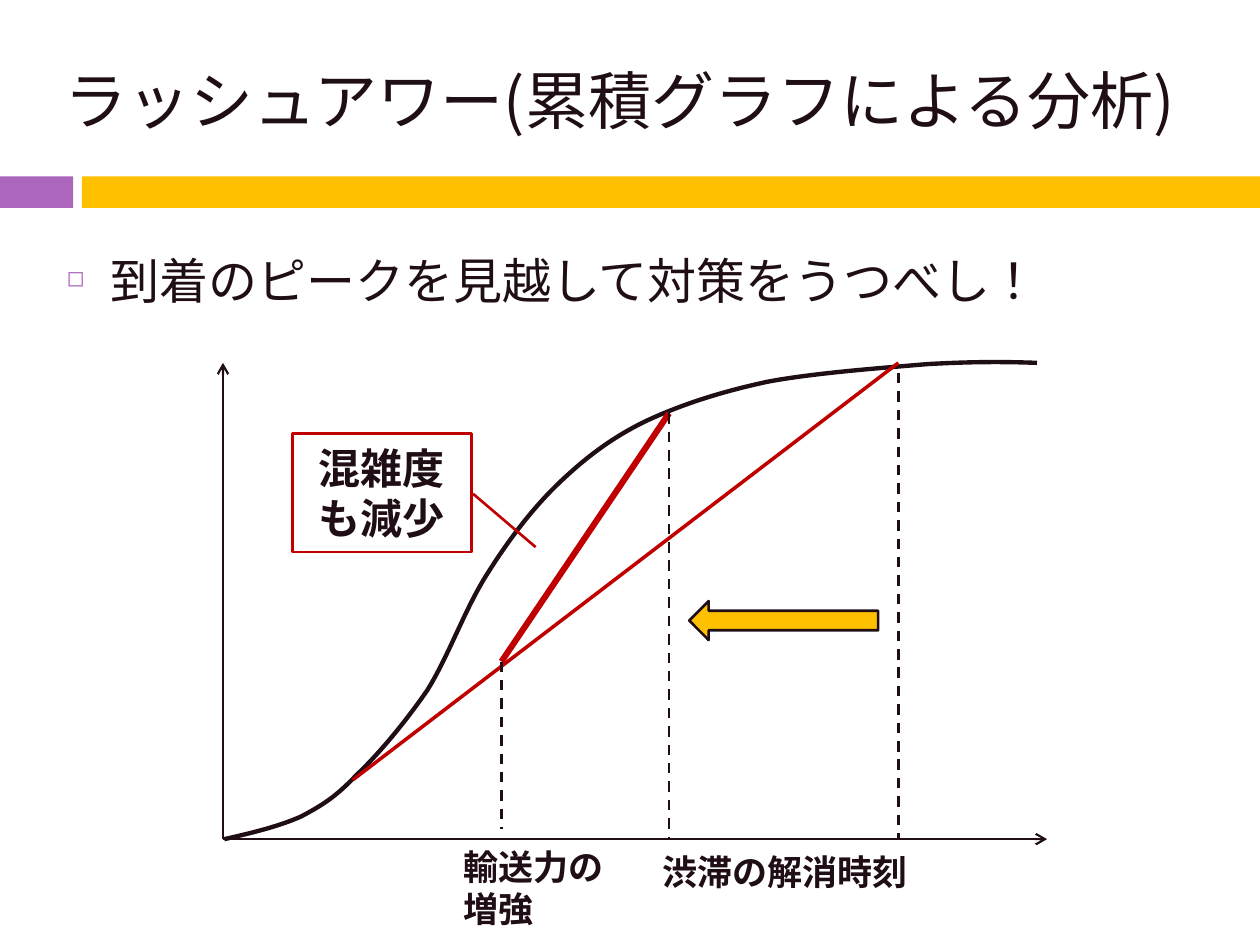
import dataclasses
from typing import Optional

import pptx
import pptx.dml.color
import pptx.enum.dml
import pptx.enum.lang
import pptx.enum.shapes
import pptx.enum.text
import pptx.oxml
import pptx.oxml.ns
import pptx.util

Inches = pptx.util.Inches
Pt = pptx.util.Pt
SHAPE = pptx.enum.shapes.MSO_SHAPE
ANCHOR = pptx.enum.text.MSO_ANCHOR
ALIGN = pptx.enum.text.PP_ALIGN

FONT = "Noto Sans CJK JP"
INK, RED, GOLD, PURPLE = "200E17", "C00000", "FFC000", "AC66BB"

# Positions shared by the parts of the graph
ORIGIN_X, AXIS_Y, TOP_Y = 1.77, 6.66, 2.88
BOOST_X, BOOST_Y = 3.98, 5.25
EARLY_X, EARLY_Y = 5.31, 3.28
LATE_X = 7.13


@dataclasses.dataclass
class Box:
    left: float
    top: float
    width: float
    height: float

    def lengths(self) -> list:
        return [Inches(value) for value in dataclasses.astuple(self)]


@dataclasses.dataclass
class Line:
    start: tuple
    end: tuple
    color: str
    width: float
    dashed: bool = False
    arrow: bool = False


@dataclasses.dataclass
class Label:
    text: str
    box: Box
    size: float
    bold: bool = False
    anchor: ANCHOR = ANCHOR.TOP


AXES = [
    Line((ORIGIN_X, AXIS_Y), (ORIGIN_X, TOP_Y), INK, 1.25, arrow=True),
    Line((ORIGIN_X, AXIS_Y), (8.31, AXIS_Y), INK, 1.25, arrow=True),
]
DEPARTURES = [
    Line((2.8, 6.19), (LATE_X, TOP_Y), RED, 2),
    Line((BOOST_X, BOOST_Y), (EARLY_X, EARLY_Y), RED, 3.5),
]
GUIDES = [
    Line((LATE_X, 2.96), (LATE_X, AXIS_Y), INK, 1.5, dashed=True),
    Line((BOOST_X, BOOST_Y), (BOOST_X, 6.58), INK, 1.5, dashed=True),
    Line((EARLY_X, EARLY_Y), (EARLY_X, AXIS_Y), INK, 1.5, dashed=True),
]
TITLE = Label("ラッシュアワー(累積グラフによる分析)", Box(0.41, 0.25, 9.31, 1.08), 36, anchor=ANCHOR.MIDDLE)
MESSAGE = Label("到着のピークを見越して対策をうつべし！", Box(0.43, 1.94, 9.21, 5.2), 28)
AXIS_LABELS = [
    Label("渋滞の解消時刻", Box(5.16, 6.7, 2.28, 0.44), 20, True),
    Label("輸送力の増強", Box(3.58, 6.66, 1.34, 0.77), 20, True),
]

# Arrivals: start point, then two control points and an end per segment
ARRIVALS_START = (1.78, 6.66)
ARRIVALS = [
    ((2, 6.61), (2.21, 6.56), (2.39, 6.48)),
    ((2.56, 6.39), (2.67, 6.32), (2.83, 6.15)),
    ((3, 5.99), (3.21, 5.74), (3.39, 5.48)),
    ((3.56, 5.21), (3.69, 4.83), (3.87, 4.55)),
    ((4.04, 4.28), (4.23, 4.03), (4.44, 3.83)),
    ((4.65, 3.63), (4.86, 3.47), (5.13, 3.34)),
    ((5.41, 3.21), (5.72, 3.11), (6.09, 3.03)),
    ((6.46, 2.96), (7, 2.92), (7.36, 2.89)),
    ((7.71, 2.87), (7.97, 2.87), (8.23, 2.88)),
]


def rgb(color: str) -> pptx.dml.color.RGBColor:
    return pptx.dml.color.RGBColor.from_string(color)


def add_xml(parent, tag: str, **attributes: str):
    element = parent.makeelement(pptx.oxml.ns.qn(tag), attributes)
    parent.append(element)
    return element


def style_shape(shape, fill: Optional[str], line: Optional[str] = None, width: float = 1.5) -> None:
    shape.shadow.inherit = False
    if fill:
        shape.fill.solid()
        shape.fill.fore_color.rgb = rgb(fill)
    else:
        shape.fill.background()
    if line:
        shape.line.color.rgb = rgb(line)
        shape.line.width = Pt(width)
    else:
        shape.line.fill.background()


def add_block(slide, kind: SHAPE, box: Box, fill: Optional[str], line: Optional[str] = None):
    shape = slide.shapes.add_shape(kind, *box.lengths())
    style_shape(shape, fill, line)
    return shape


def add_line(slide, line: Line) -> None:
    ends = [Inches(value) for value in (*line.start, *line.end)]
    connector = slide.shapes.add_connector(pptx.enum.shapes.MSO_CONNECTOR.STRAIGHT, *ends)
    connector.line.color.rgb = rgb(line.color)
    connector.line.width = Pt(line.width)
    if line.dashed:
        connector.line.dash_style = pptx.enum.dml.MSO_LINE.DASH
    if line.arrow:
        add_xml(connector.line._get_or_add_ln(), "a:tailEnd", type="arrow")
    add_xml(connector._element.spPr, "a:effectLst")


def write_text(shape, text: str, size: float, bold: bool, anchor: ANCHOR):
    frame = shape.text_frame
    frame.word_wrap = True
    frame.vertical_anchor = anchor
    paragraph = frame.paragraphs[0]
    paragraph.alignment = ALIGN.LEFT
    paragraph.line_spacing = Pt(size * 1.2)
    run = paragraph.add_run()
    run.text = text
    run.font.name = FONT
    run.font.size = Pt(size)
    run.font.bold = bold
    run.font.color.rgb = rgb(INK)
    run.font.language_id = pptx.enum.lang.MSO_LANGUAGE_ID.JAPANESE
    add_xml(run.font._element, "a:ea", typeface=FONT)
    return paragraph


def add_label(slide, label: Label):
    shape = slide.shapes.add_textbox(*label.box.lengths())
    return write_text(shape, label.text, label.size, label.bold, label.anchor)


def add_bullet(paragraph) -> None:
    properties = paragraph._p.get_or_add_pPr()
    properties.set("marL", str(Inches(0.35)))
    properties.set("indent", str(-Inches(0.35)))
    add_xml(add_xml(properties, "a:buClr"), "a:srgbClr", val=PURPLE)
    add_xml(properties, "a:buSzPct", val="45000")
    add_xml(properties, "a:buChar", char="◻")


def add_curve(slide, start: tuple, segments: list) -> None:
    builder = slide.shapes.build_freeform(*[Inches(value) for value in start])
    points = [(Inches(x), Inches(y)) for segment in segments for x, y in segment]
    builder.add_line_segments(points, close=False)
    shape = builder.convert_to_shape()
    style_shape(shape, None, INK, 2.5)

    # Every three straight steps become one Bezier segment
    outline = next(shape._element.iter(pptx.oxml.ns.qn("a:path")))
    steps = outline.findall(pptx.oxml.ns.qn("a:lnTo"))
    for first in range(0, len(steps), 3):
        bezier = add_xml(outline, "a:cubicBezTo")
        for step in steps[first:first + 3]:
            bezier.append(step[0])
            outline.remove(step)


def main() -> None:
    presentation = pptx.Presentation()
    presentation.slide_width, presentation.slide_height = Inches(10), Inches(7.5)
    slide = presentation.slides.add_slide(presentation.slide_layouts[6])

    # Band, message and title
    add_block(slide, SHAPE.RECTANGLE, Box(0, 1.4, 0.58, 0.25), PURPLE)
    add_block(slide, SHAPE.RECTANGLE, Box(0.65, 1.4, 9.35, 0.25), GOLD)
    add_bullet(add_label(slide, MESSAGE))
    add_label(slide, TITLE)

    # Cumulative graph
    for line in AXES:
        add_line(slide, line)
    add_curve(slide, ARRIVALS_START, ARRIVALS)
    for line in DEPARTURES + GUIDES:
        add_line(slide, line)
    for label in AXIS_LABELS:
        add_label(slide, label)

    # Callout and arrow to the earlier time
    callout = add_block(slide, SHAPE.LINE_CALLOUT_1, Box(2.32, 3.44, 1.42, 0.94), None, RED)
    for index, value in enumerate((0.51, 1.01, 0.96, 1.36)):
        callout.adjustments[index] = value
    write_text(callout, "混雑度も減少", 24, True, ANCHOR.MIDDLE).alignment = ALIGN.CENTER
    add_block(slide, SHAPE.LEFT_ARROW, Box(5.47, 4.77, 1.5, 0.31), GOLD, INK)

    presentation.save("out.pptx")


if __name__ == "__main__":
    main()
